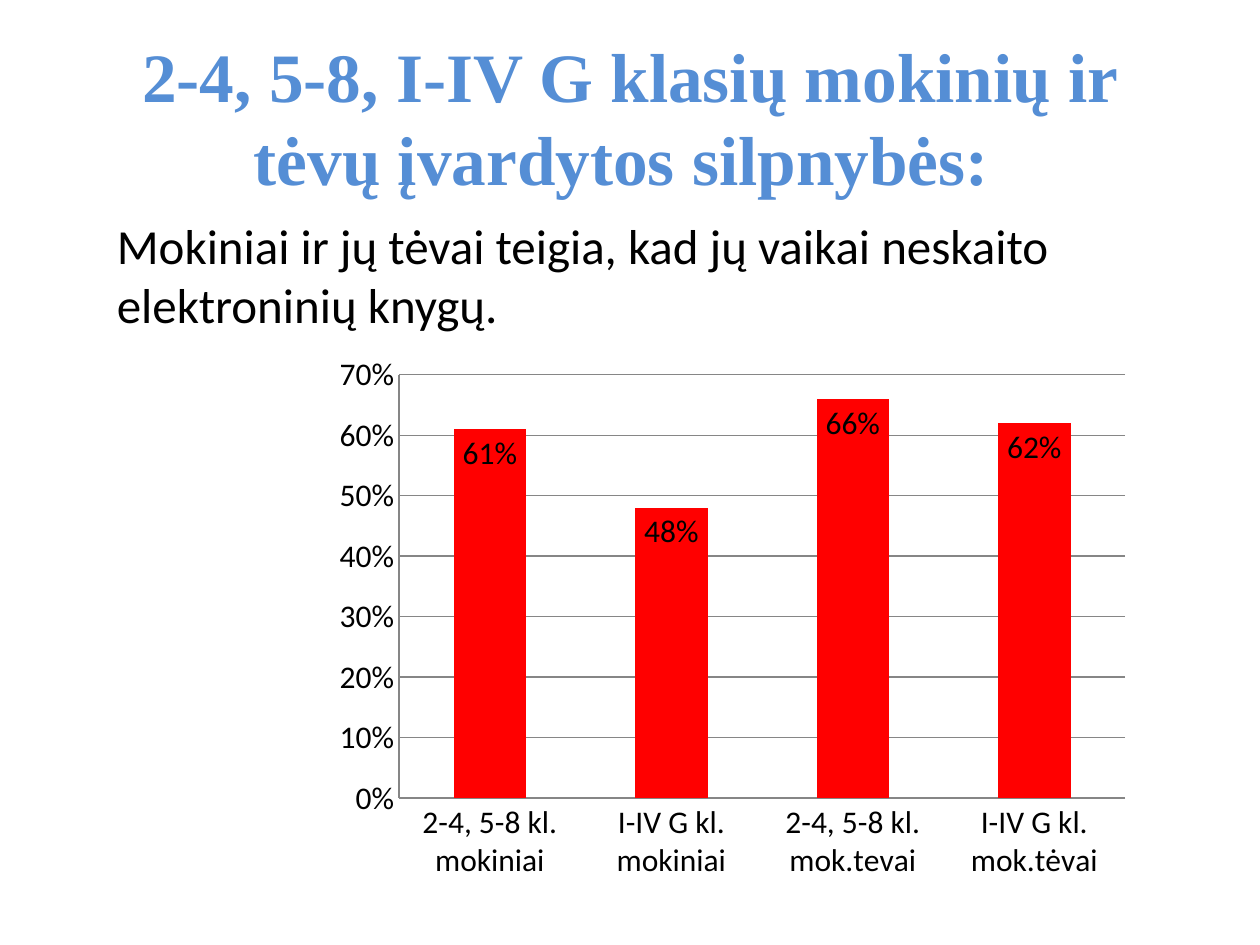
from dataclasses import dataclass, field

from lxml import etree
from pptx import Presentation
from pptx.chart.data import CategoryChartData
from pptx.dml.color import RGBColor
from pptx.enum.chart import XL_CHART_TYPE, XL_LABEL_POSITION, XL_TICK_MARK
from pptx.enum.text import MSO_ANCHOR, PP_ALIGN
from pptx.oxml.ns import qn
from pptx.util import Pt

COLUMNS = XL_CHART_TYPE.COLUMN_CLUSTERED
INSIDE_END = XL_LABEL_POSITION.INSIDE_END
NO_TICK = XL_TICK_MARK.NONE
TOP, MIDDLE = MSO_ANCHOR.TOP, MSO_ANCHOR.MIDDLE
LEFT, CENTER = PP_ALIGN.LEFT, PP_ALIGN.CENTER

COLORS = {"title": "558ED5", "text": "000000", "bar": "FF0000", "grid": "868686"}
PERCENT = "0%"
WEAKNESS_SHARES = {
    "2-4, 5-8 kl. mokiniai": 0.61,
    "I-IV G kl. mokiniai": 0.48,
    "2-4, 5-8 kl. mok.tevai": 0.66,
    "I-IV G kl. mok.tėvai": 0.62,
}
PLOT_AREA = {"x": 0.103, "y": 0.037, "w": 0.864, "h": 0.757}


@dataclass
class TextBlock:
    text: str
    box: tuple[float, float, float, float]
    color: str
    anchor: MSO_ANCHOR = TOP
    align: PP_ALIGN = LEFT
    font: dict = field(default_factory=dict)


TEXT_BLOCKS = [
    TextBlock("2-4, 5-8, I-IV G klasių mokinių ir tėvų įvardytos silpnybės: ",
              (36, 21.6, 648, 90), "title", MIDDLE, CENTER,
              {"name": "Times New Roman", "size": Pt(39.6), "bold": True}),
    TextBlock("Mokiniai ir jų tėvai teigia, kad jų vaikai neskaito elektroninių knygų.",
              (59.76, 119.5, 629.3, 74.9), "text",
              font={"name": "Calibri", "size": Pt(28)}),
]


def rgb(name: str) -> RGBColor:
    return RGBColor.from_string(COLORS[name])


def apply_format(target, values: dict) -> None:
    for name, value in values.items():
        setattr(target, name, value)


def add_text(page, block: TextBlock) -> None:
    box = page.shapes.add_textbox(*map(Pt, block.box))
    apply_format(box.text_frame, {"word_wrap": True, "vertical_anchor": block.anchor})
    para = box.text_frame.paragraphs[0]
    para.alignment = block.align
    span = para.add_run()
    span.text = block.text
    apply_format(span.font, block.font)
    span.font.color.rgb = rgb(block.color)


def set_plot_area(chart, fractions: dict[str, float]) -> None:
    """Fix the inner plot area as fractions of the chart frame."""
    plot_area = chart.plots[0]._element.getparent()
    for old in plot_area.findall(qn("c:layout")):
        plot_area.remove(old)
    layout = etree.Element(qn("c:layout"))
    manual = etree.SubElement(layout, qn("c:manualLayout"))
    settings = {"layoutTarget": "inner", "xMode": "edge", "yMode": "edge", **fractions}
    for name, value in settings.items():
        etree.SubElement(manual, qn(f"c:{name}"), val=str(value))
    plot_area.insert(0, layout)


def style_line(line) -> None:
    line.color.rgb = rgb("grid")
    line.width = Pt(0.75)


def add_share_chart(page, box: tuple[float, float, float, float]) -> None:
    data = CategoryChartData(number_format=PERCENT)
    data.categories = list(WEAKNESS_SHARES)
    data.add_series("Series 1", list(WEAKNESS_SHARES.values()))
    chart = page.shapes.add_chart(COLUMNS, *map(Pt, box), data).chart
    apply_format(chart, {"has_legend": False, "has_title": False})
    apply_format(chart.font, {"name": "Calibri", "size": Pt(18)})
    chart.font.color.rgb = rgb("text")
    set_plot_area(chart, PLOT_AREA)

    # Axes and gridlines
    for axis in (chart.category_axis, chart.value_axis):
        apply_format(axis, {"major_tick_mark": NO_TICK, "minor_tick_mark": NO_TICK})
        style_line(axis.format.line)
    scale = chart.value_axis
    apply_format(scale, {"minimum_scale": 0, "maximum_scale": 0.7, "major_unit": 0.1,
                         "has_major_gridlines": True})
    style_line(scale.major_gridlines.format.line)
    apply_format(scale.tick_labels, {"number_format": PERCENT,
                                     "number_format_is_linked": False})

    # Bars and their labels
    plot = chart.plots[0]
    apply_format(plot, {"gap_width": 150, "vary_by_categories": False})
    bars = plot.series[0]
    bars.format.fill.solid()
    bars.format.fill.fore_color.rgb = rgb("bar")
    apply_format(bars.data_labels, {"show_value": True, "position": INSIDE_END,
                                    "number_format": PERCENT,
                                    "number_format_is_linked": False})


def main() -> None:
    deck = Presentation()
    apply_format(deck, {"slide_width": Pt(720), "slide_height": Pt(540)})
    page = deck.slides.add_slide(deck.slide_layouts[6])
    for block in TEXT_BLOCKS:
        add_text(page, block)
    add_share_chart(page, (178.6, 202.3, 480.2, 319.7))
    deck.save("out.pptx")


if __name__ == "__main__":
    main()
